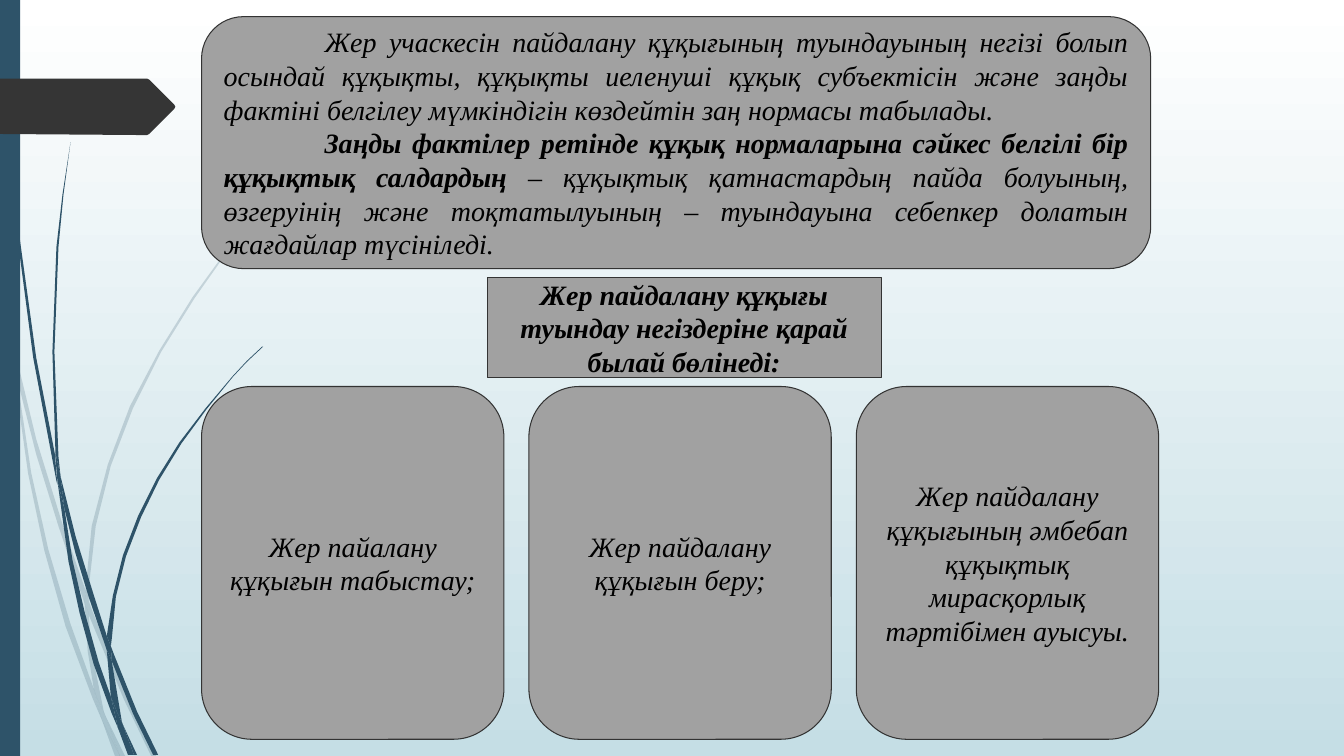
import pptx
import pptx.util
import pptx.dml.color
import pptx.enum.shapes
import pptx.enum.text
import pptx.oxml.ns
import lxml.etree

Cm = pptx.util.Cm
qn = pptx.oxml.ns.qn
SHAPE = pptx.enum.shapes.MSO_SHAPE
ALIGN = pptx.enum.text.PP_ALIGN

COLORS = {"stalk": "2E5369", "tag": "353535", "box": "A1A1A1", "edge": "333333",
          "text": "000000", "sky": "FFFFFF", "ground": "C5DEE5"}
UNIT = 2.54  # centimetres per unit of the outline points below
FONT = {"name": "Times New Roman", "size": pptx.util.Pt(20), "italic": True}

PALE_STALKS = [
    [(0.58, 5.22), (0.84, 5.99), (0.85, 5.86), (0.62, 5.2), (0.36, 4.36), (0.14, 3.45),
     (0.17, 3.76), (0.36, 4.51)],
    [(0.92, 6.07), (0.88, 5.96), (0.88, 6.1), (1.23, 6.94), (1.5, 7.5), (1.55, 7.5),
     (1.27, 6.92)],
    [(1.19, 7.5), (1.24, 7.5), (1.05, 7.11)],
    [(0.93, 6.83), (0.7, 6.19), (0.48, 5.45), (0.31, 4.69), (0.17, 3.76), (0.11, 3.5),
     (0.28, 4.7), (0.44, 5.46), (0.65, 6.21), (0.92, 6.93), (1.01, 7.14), (0.99, 7.07)],
    [(0.84, 5.99), (0.87, 6.46), (0.93, 6.83), (0.96, 6.92), (1.05, 7.11), (1.03, 7.06),
     (0.91, 6.46), (0.88, 6.1), (0.88, 6.08)],
    [(0.88, 5.84), (0.95, 5.22), (1.1, 4.62), (1.32, 4.05), (1.6, 3.49), (1.93, 2.96),
     (2.29, 2.45), (2.68, 1.98), (2.9, 1.75), (3.12, 1.54), (3.12, 1.53), (2.89, 1.75),
     (2.68, 1.97), (2.28, 2.44), (1.91, 2.95), (1.58, 3.48), (1.29, 4.03), (1.07, 4.61),
     (0.91, 5.22), (0.85, 5.84), (0.85, 5.86), (0.88, 5.96)],
    [(1.01, 7.14), (1.14, 7.5), (1.19, 7.5)],
    [(0.88, 6.08), (0.88, 6.1), (0.88, 5.96), (0.85, 5.86), (0.84, 5.99)],
    [(0.96, 6.92), (0.93, 6.83), (0.99, 7.07), (1.01, 7.14), (1.19, 7.5), (1.05, 7.11)],
]
DARK_STALKS = [
    [(0.07, 1.1), (0.17, 2.33), (0.33, 3.55), (0.56, 4.77), (0.57, 4.81), (0.55, 4.57),
     (0.55, 4.53), (0.36, 3.55), (0.19, 2.32), (0.08, 1.09), (0.05, 0.48), (0.04, 0),
     (0.03, 0), (0.04, 0.48)],
    [(0.88, 5.92), (1.06, 6.45), (1.06, 6.33), (1.06, 6.31), (0.93, 5.9), (0.75, 5.32),
     (0.6, 4.72), (0.64, 5.05), (0.75, 5.49)],
    [(1.13, 6.49), (1.1, 6.41), (1.11, 6.56), (1.32, 7.08), (1.52, 7.49), (1.57, 7.49),
     (1.36, 7.06)],
    [(1.1, 6.91), (0.98, 6.57), (0.84, 6.07), (0.72, 5.56), (0.64, 5.05), (0.57, 4.77),
     (0.68, 5.57), (0.79, 6.08), (0.93, 6.59), (1.11, 7.08), (1.17, 7.22), (1.16, 7.17)],
    [(0.6, 4.72), (0.58, 4.53), (0.54, 3.49), (0.58, 2.45), (0.63, 1.93), (0.7, 1.41),
     (0.62, 1.93), (0.56, 2.45), (0.52, 3.49), (0.55, 4.49)],
    [(1.33, 7.49), (1.36, 7.49), (1.22, 7.19)],
    [(0.57, 4.77), (0.64, 5.05), (0.6, 4.72), (0.55, 4.49), (0.55, 4.53)],
    [(1.11, 6.33), (1.15, 5.92), (1.25, 5.52), (1.4, 5.13), (1.58, 4.76), (1.8, 4.4),
     (2.05, 4.06), (2.31, 3.74), (2.45, 3.59), (2.61, 3.44), (2.6, 3.44), (2.45, 3.58),
     (2.31, 3.73), (2.04, 4.05), (1.78, 4.39), (1.56, 4.74), (1.37, 5.12), (1.22, 5.51),
     (1.12, 5.91), (1.06, 6.31), (1.1, 6.41)],
    [(1.17, 7.22), (1.27, 7.49), (1.31, 7.49)],
    [(1.06, 6.45), (1.1, 6.91), (1.16, 7.06), (1.22, 7.19), (1.21, 7.16), (1.11, 6.56),
     (1.09, 6.51)],
    [(1.06, 6.45), (1.09, 6.51), (1.11, 6.56), (1.1, 6.41), (1.06, 6.31)],
    [(1.16, 7.06), (1.1, 6.91), (1.16, 7.17), (1.17, 7.22), (1.3, 7.49), (1.33, 7.49),
     (1.22, 7.19)],
]
TAG = [(1.73, 1.08), (1.48, 1.33), (1.46, 1.34), (1.36, 1.34), (0, 1.33), (0, 0.78),
       (1.46, 0.78), (1.48, 0.79), (1.73, 1.04), (1.74, 1.06)]

# Each box: preset, left, top, width, height, alignment, paragraphs of (text, bold)
BOXES = [
    (SHAPE.ROUNDED_RECTANGLE, 5.08, 0.42, 23.92, 6.35, ALIGN.JUSTIFY, [
        [("\tЖер учаскесін пайдалану құқығының туындауының негізі болып осындай құқықты, "
          "құқықты иеленуші құқық субъектісін және заңды фактіні белгілеу мүмкіндігін "
          "көздейтін заң нормасы табылады.", False)],
        [("\t", False),
         ("Заңды фактілер ретінде құқық нормаларына сәйкес белгілі бір құқықтық салдардың ",
          True),
         ("– құқықтық қатнастардың пайда болуының, өзгеруінің және тоқтатылуының – "
          "туындауына себепкер долатын жағдайлар түсініледі.", False)]]),
    (SHAPE.RECTANGLE, 12.28, 6.99, 9.93, 2.53, ALIGN.CENTER, [
        [("Жер пайдалану құқығы туындау негіздеріне қарай былай бөлінеді:", True)]]),
]
WAYS = ["Жер пайалану құқығын табыстау;",
        "Жер пайдалану құқығын беру;",
        "Жер пайдалану құқығының әмбебап құқықтық мирасқорлық тәртібімен ауысуы."]
for index, way in enumerate(WAYS):
    BOXES.append((SHAPE.ROUNDED_RECTANGLE, 5.08 + 8.25 * index, 9.74, 7.62, 8.89,
                  ALIGN.CENTER, [[(way, False)]]))


def rgb(name):
    return pptx.dml.color.RGBColor.from_string(COLORS[name])


def draw_outline(shapes, points, color):
    """Add a closed, filled outline without a border."""
    corners = [(Cm(x * UNIT), Cm(y * UNIT)) for x, y in points]
    builder = shapes.build_freeform(*corners[0])
    builder.add_line_segments(corners[1:], close=True)
    outline = builder.convert_to_shape()
    outline.shadow.inherit = False
    outline.fill.solid()
    outline.fill.fore_color.rgb = rgb(color)
    outline.line.fill.background()
    return outline


deck = pptx.Presentation()
deck.slide_width, deck.slide_height = Cm(33.87), Cm(19.05)
page = deck.slides.add_slide(deck.slide_layouts[6])

backdrop = page.background.fill
backdrop.gradient()
backdrop.gradient_angle = 270
for stop, color in zip(backdrop.gradient_stops, ("sky", "ground")):
    stop.color.rgb = rgb(color)

for stalks, opacity in ((PALE_STALKS, 20), (DARK_STALKS, 100)):
    group = page.shapes.add_group_shape()
    for points in stalks:
        stalk = draw_outline(group.shapes, points, "stalk")
        if opacity < 100:
            tint = stalk.fill._xPr.find(".//" + qn("a:srgbClr"))
            lxml.etree.SubElement(tint, qn("a:alpha")).set("val", str(opacity * 1000))

band = page.shapes.add_shape(SHAPE.RECTANGLE, 0, 0, Cm(0.51), deck.slide_height)
band.shadow.inherit = False
band.fill.solid()
band.fill.fore_color.rgb = rgb("stalk")
band.line.fill.background()
draw_outline(page.shapes, TAG, "tag")

for preset, left, top, width, height, alignment, paragraphs in BOXES:
    box = page.shapes.add_shape(preset, Cm(left), Cm(top), Cm(width), Cm(height))
    box.shadow.inherit = False
    box.fill.solid()
    box.fill.fore_color.rgb = rgb("box")
    box.line.color.rgb = rgb("edge")
    box.line.width = pptx.util.Pt(0.75)
    frame = box.text_frame
    frame.word_wrap = True
    frame.vertical_anchor = pptx.enum.text.MSO_ANCHOR.MIDDLE
    for number, pieces in enumerate(paragraphs):
        para = frame.add_paragraph() if number else frame.paragraphs[0]
        para.alignment = alignment
        if alignment == ALIGN.JUSTIFY:
            tabs = lxml.etree.SubElement(para._p.get_or_add_pPr(), qn("a:tabLst"))
            tab = lxml.etree.SubElement(tabs, qn("a:tab"))
            tab.set("pos", str(Cm(2.54)))
            tab.set("algn", "l")
        for text, bold in pieces:
            span = para.add_run()
            span.text = text
            span.font.color.rgb = rgb("text")
            for key, value in {**FONT, "bold": bold}.items():
                setattr(span.font, key, value)

deck.save("out.pptx")
